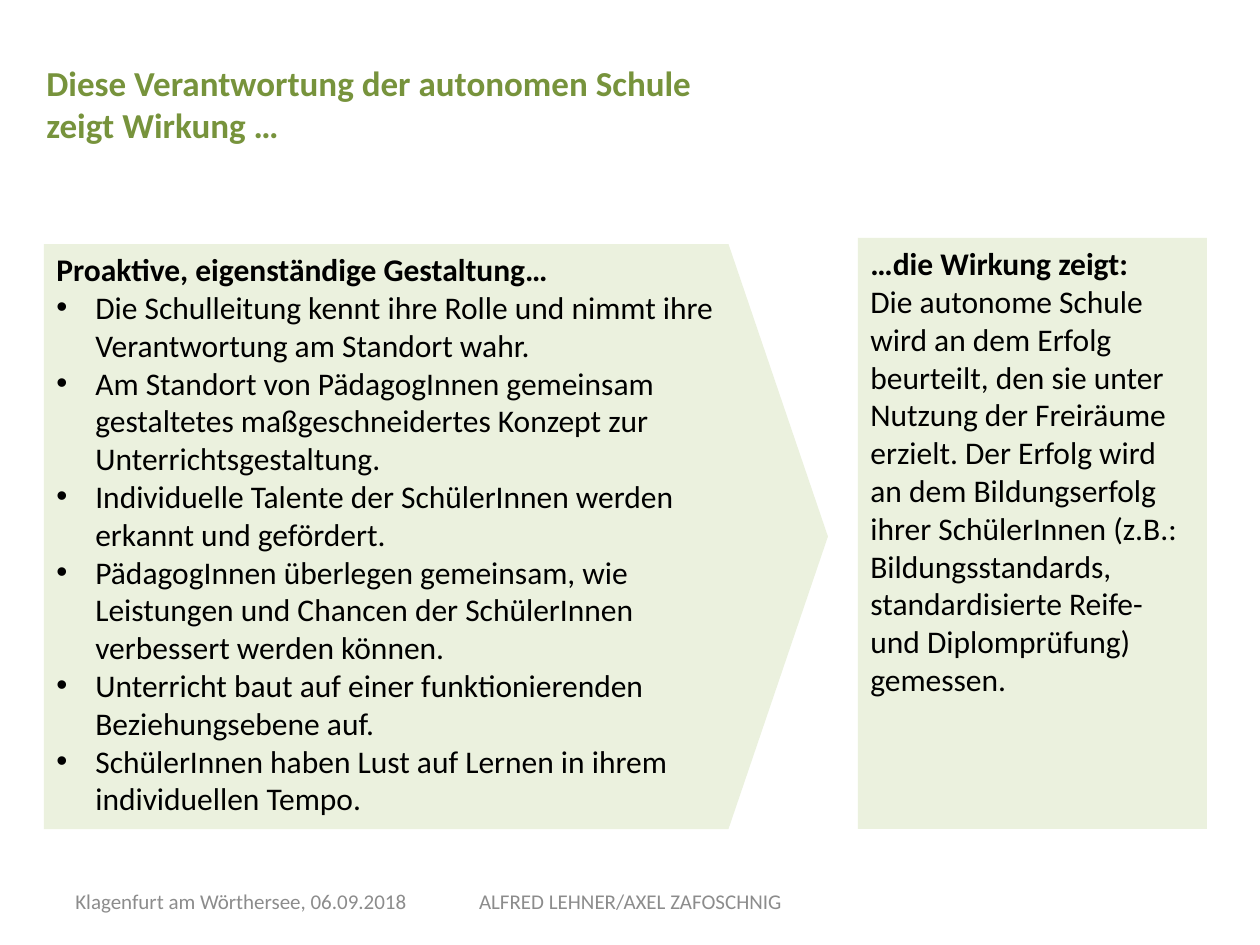
from lxml import etree
from pptx import Presentation
from pptx.dml.color import RGBColor
from pptx.enum.shapes import MSO_SHAPE as Shape
from pptx.enum.text import MSO_ANCHOR as Anchor, PP_ALIGN as Align
from pptx.oxml.ns import qn
from pptx.util import Pt

PX = 914400 / 126
FONT = "Calibri"
GREEN, PALE, BLACK, GRAY = "77933C", "EBF1DE", "000000", "8C8C8C"
INDENT = 39

TITLE = "Diese Verantwortung der autonomen Schule\nzeigt Wirkung …"
CAUSE_HEAD = "Proaktive, eigenständige Gestaltung…"
CAUSES = [
    "Die Schulleitung kennt ihre Rolle und nimmt ihre Verantwortung am Standort wahr.",
    "Am Standort von PädagogInnen gemeinsam gestaltetes maßgeschneidertes Konzept "
    "zur Unterrichtsgestaltung.",
    "Individuelle Talente der SchülerInnen werden erkannt und gefördert.",
    "PädagogInnen überlegen gemeinsam, wie Leistungen und Chancen der SchülerInnen "
    "verbessert werden können.",
    "Unterricht baut auf einer funktionierenden Beziehungsebene auf.",
    "SchülerInnen haben Lust auf Lernen in ihrem individuellen Tempo.",
]
EFFECT_HEAD = "…die Wirkung zeigt:"
EFFECT = (
    "Die autonome Schule wird an dem Erfolg beurteilt, den sie unter Nutzung der "
    "Freiräume erzielt. Der Erfolg wird an dem Bildungserfolg ihrer SchülerInnen "
    "(z.B.: Bildungsstandards, standardisierte Reife- und Diplomprüfung) gemessen."
)


def px(*lengths):
    return [round(length * PX) for length in lengths]


def color(value):
    return RGBColor.from_string(value)


def add_bullet(para):
    props = para._p.get_or_add_pPr()
    indent, = px(INDENT)
    props.set("marL", str(indent))
    props.set("indent", str(-indent))
    etree.SubElement(props, qn("a:buFont")).set("typeface", "Arial")
    etree.SubElement(props, qn("a:buChar")).set("char", "•")


def write(box, text, size=18, fill=BLACK, bold=False, align=Align.LEFT, bullet=False):
    """Append one paragraph, using the empty first one when it is free."""
    frame = box.text_frame
    first = frame.paragraphs[0]
    para = frame.add_paragraph() if first.runs else first
    para.alignment = align
    if bullet:
        add_bullet(para)
    for number, line in enumerate(text.split("\n")):
        if number:
            para.add_line_break()
        span = para.add_run()
        span.text = line
        font = span.font
        font.name, font.size, font.bold = FONT, Pt(size), bold
        font.color.rgb = color(fill)


def add_label(page, bounds, text, anchor=Anchor.TOP, **style):
    box = page.shapes.add_textbox(*px(*bounds))
    box.text_frame.word_wrap = True
    box.text_frame.vertical_anchor = anchor
    write(box, text, **style)


def add_panel(page, kind, bounds, heading):
    panel = page.shapes.add_shape(kind, *px(*bounds))
    panel.shadow.inherit = False
    panel.fill.solid()
    panel.fill.fore_color.rgb = color(PALE)
    panel.line.fill.background()
    panel.text_frame.word_wrap = True
    panel.text_frame.vertical_anchor = Anchor.TOP
    write(panel, heading, bold=True)
    return panel


def main():
    deck = Presentation()
    deck.slide_width, deck.slide_height = px(1260, 945)
    page = deck.slides.add_slide(deck.slide_layouts[6])

    # Title
    add_label(page, (34, 55, 1134, 137), TITLE, size=20, fill=GREEN, bold=True)

    # Effect on the right
    effect = add_panel(page, Shape.RECTANGLE, (858, 238, 349, 591), EFFECT_HEAD)
    write(effect, EFFECT)

    # Causes in the arrow pointing at it
    causes = add_panel(page, Shape.PENTAGON, (44, 244, 784, 585), CAUSE_HEAD)
    causes.adjustments[0] = 0.17
    for cause in CAUSES:
        write(causes, cause, bullet=True)

    # Footer
    footer = {"size": 12, "fill": GRAY, "anchor": Anchor.MIDDLE}
    add_label(page, (63, 876, 368, 50), "Klagenfurt am Wörthersee, 06.09.2018", **footer)
    add_label(page, (431, 876, 399, 50), "ALFRED LEHNER/AXEL ZAFOSCHNIG",
              align=Align.CENTER, **footer)

    deck.save("out.pptx")


if __name__ == "__main__":
    main()
